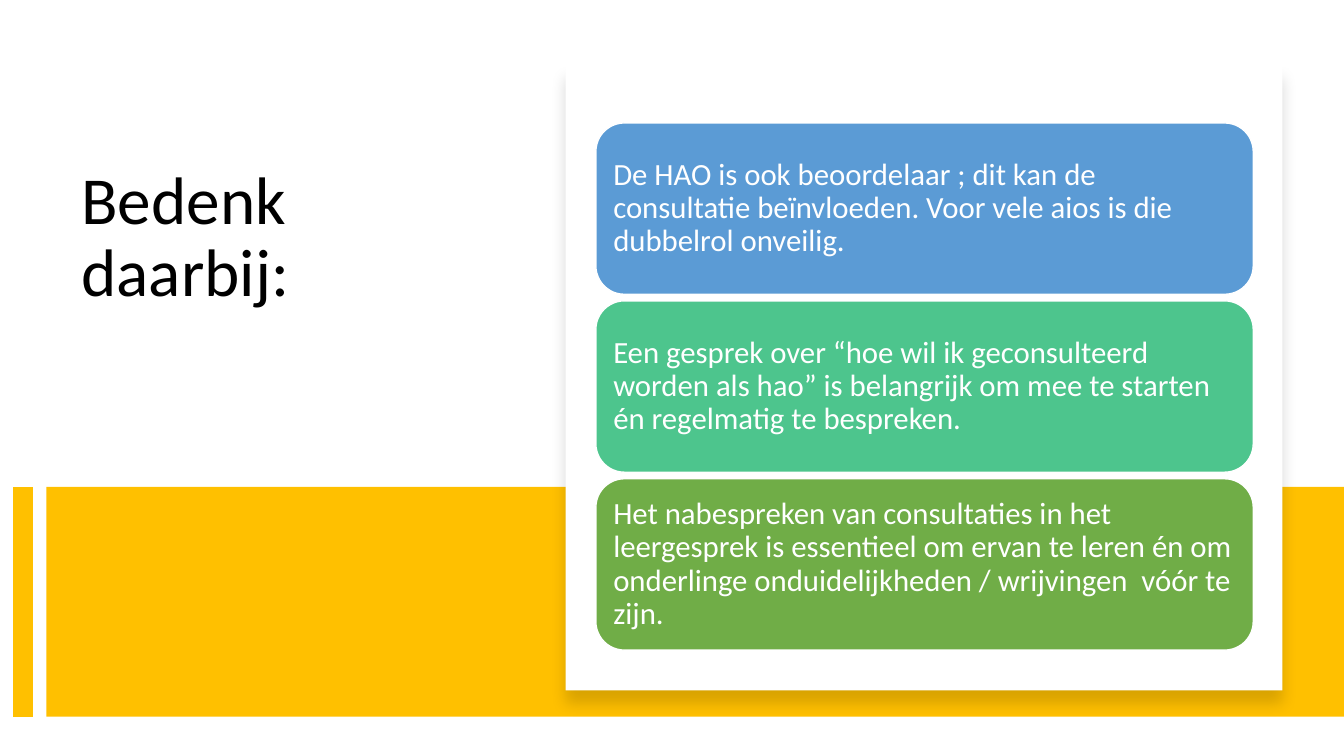
"""Build the slide with three points to consider about consultations."""
from lxml.etree import SubElement
from pptx import Presentation
from pptx.dml.color import RGBColor
from pptx.enum.shapes import MSO_CONNECTOR, MSO_SHAPE
from pptx.enum.text import MSO_ANCHOR, PP_ALIGN
from pptx.oxml.ns import qn
from pptx.util import Inches, Pt


def add_block(kind, left, top, width, height, fill, line=None):
    shape = slide.shapes.add_shape(
        kind, Inches(left), Inches(top), Inches(width), Inches(height))
    shape.shadow.inherit = False
    shape.fill.solid()
    shape.fill.fore_color.rgb = RGBColor.from_string(fill)
    if line:
        shape.line.color.rgb = RGBColor.from_string(line)
        shape.line.width = Pt(1)
    else:
        shape.line.fill.background()
    return shape


def write_text(shape, text, size, color, anchor, inset_x, inset_y):
    frame = shape.text_frame
    frame.word_wrap = True
    frame.vertical_anchor = anchor
    frame.margin_left = frame.margin_right = Inches(inset_x)
    frame.margin_top = frame.margin_bottom = Inches(inset_y)
    paragraph = frame.paragraphs[0]
    paragraph.text = text
    paragraph.alignment = PP_ALIGN.LEFT
    paragraph.line_spacing = 0.9
    for run in paragraph.runs:
        run.font.name = "Calibri"
        run.font.size = Pt(size)
        run.font.color.rgb = RGBColor.from_string(color)


presentation = Presentation()
presentation.slide_width = Inches(13.33)
presentation.slide_height = Inches(7.5)
slide = presentation.slides.add_slide(presentation.slide_layouts[6])

title = slide.shapes.add_textbox(Inches(0.71), Inches(1.6), Inches(4.15), Inches(2.94))
write_text(title, "Bedenk \ndaarbij:", size=48, color="000000",
           anchor=MSO_ANCHOR.TOP, inset_x=0.1, inset_y=0.05)

add_block(MSO_SHAPE.RECTANGLE, 0.46, 4.83, 12.87, 2.28, "FFC000")
accent = slide.shapes.add_connector(
    MSO_CONNECTOR.STRAIGHT, Inches(0.23), Inches(4.83), Inches(0.23), Inches(7.11))
accent.line.color.rgb = RGBColor.from_string("FFC000")
accent.line.width = Pt(14)
SubElement(accent._element.spPr, qn("a:effectLst"))

panel = add_block(MSO_SHAPE.RECTANGLE, 5.61, 0.64, 7.11, 6.21, "FFFFFF")
effects = panel._element.spPr.find(qn("a:effectLst"))
shadow = SubElement(effects, qn("a:outerShdw"), blurRad=str(Pt(11)), dist=str(Pt(10)),
                    dir="5400000", algn="t", rotWithShape="0")
shadow_color = SubElement(shadow, qn("a:srgbClr"), val="000000")
SubElement(shadow_color, qn("a:alpha"), val="15000")

points = [
    ("5B9BD5", "De HAO is ook beoordelaar ; dit kan de consultatie beïnvloeden. "
               "Voor vele aios is die dubbelrol onveilig."),
    ("4DC58D", "Een gesprek over “hoe wil ik geconsulteerd worden als hao” is "
               "belangrijk om mee te starten én regelmatig te bespreken."),
    ("70AD47", "Het nabespreken van consultaties in het leergesprek is essentieel om "
               "ervan te leren én om onderlinge onduidelijkheden / wrijvingen  vóór te zijn."),
]
for index, (color, text) in enumerate(points):
    card = add_block(MSO_SHAPE.ROUNDED_RECTANGLE, 5.91, 1.22 + index * 1.765,
                     6.52, 1.7, color, line="FFFFFF")
    write_text(card, text, size=22, color="FFFFFF",
               anchor=MSO_ANCHOR.MIDDLE, inset_x=0.09, inset_y=0.09)

presentation.save("out.pptx")
